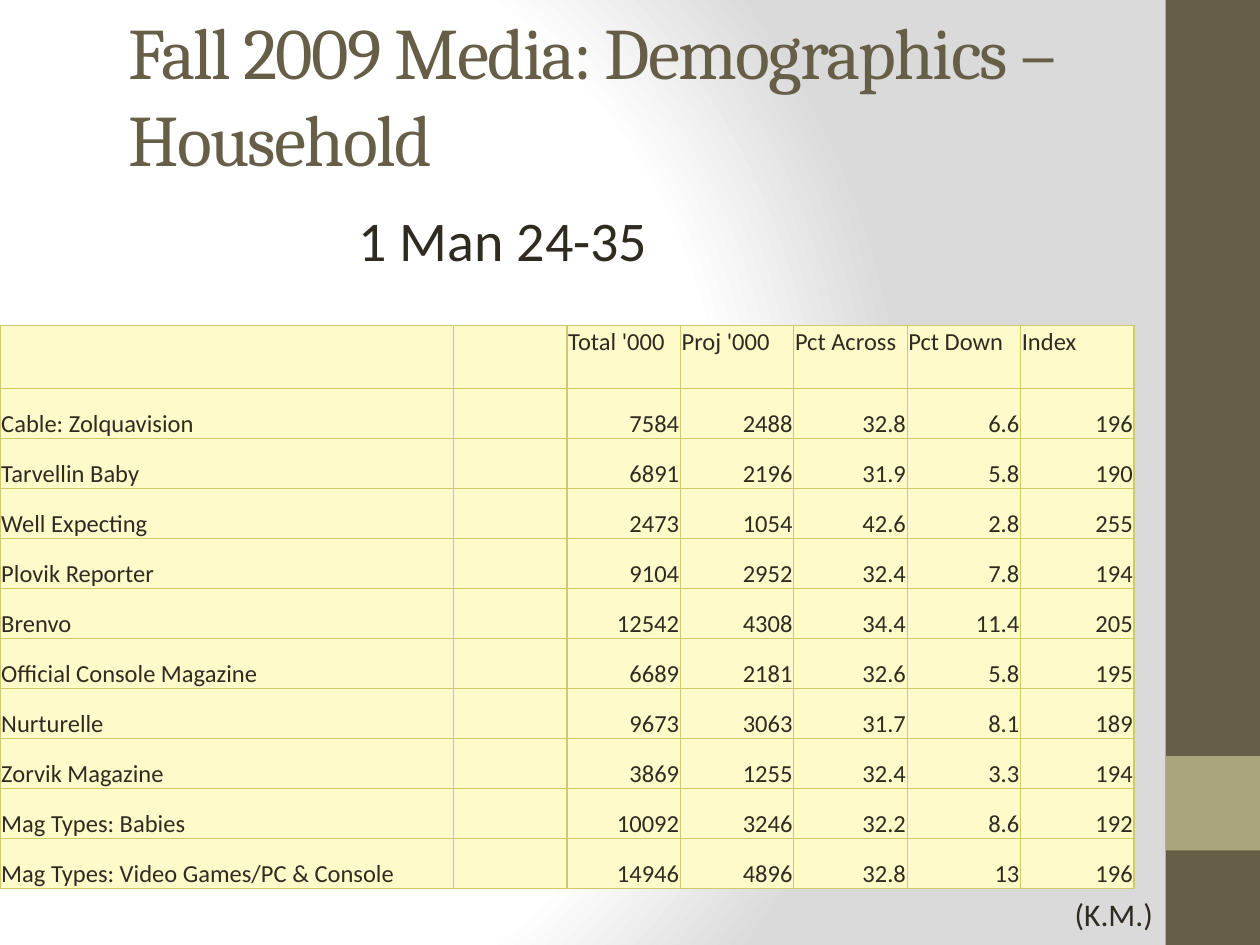
from pptx import Presentation
from pptx.dml.color import RGBColor
from pptx.enum.shapes import MSO_SHAPE as Preset
from pptx.enum.text import MSO_ANCHOR as Anchor, PP_ALIGN as Align
from pptx.oxml import parse_xml
from pptx.oxml.ns import nsdecls
from pptx.util import Pt

BROWN = RGBColor(0x67, 0x5E, 0x47)
SAGE = RGBColor(0xA9, 0xA5, 0x7C)
INK = RGBColor(0x2F, 0x2B, 0x20)
CREAM = RGBColor(0xFF, 0xFA, 0xC9)
BORDER = RGBColor(0xD0, 0xC9, 0x67)
WHITE = RGBColor(0xFF, 0xFF, 0xFF)
GREY = RGBColor(0xDA, 0xDA, 0xDA)

HEADINGS = ["", "", "Total '000", "Proj '000", "Pct Across", "Pct Down", "Index"]
MEDIA = [
    ("Cable: Zolquavision", "7584", "2488", "32.8", "6.6", "196"),
    ("Tarvellin Baby", "6891", "2196", "31.9", "5.8", "190"),
    ("Well Expecting", "2473", "1054", "42.6", "2.8", "255"),
    ("Plovik Reporter", "9104", "2952", "32.4", "7.8", "194"),
    ("Brenvo", "12542", "4308", "34.4", "11.4", "205"),
    ("Official Console Magazine", "6689", "2181", "32.6", "5.8", "195"),
    ("Nurturelle", "9673", "3063", "31.7", "8.1", "189"),
    ("Zorvik Magazine", "3869", "1255", "32.4", "3.3", "194"),
    ("Mag Types: Babies", "10092", "3246", "32.2", "8.6", "192"),
    ("Mag Types: Video Games/PC & Console", "14946", "4896", "32.8", "13", "196"),
]
COLUMN_WIDTHS = [259.2] + [64.8] * 6
ROW_HEIGHTS = [36] + [28.6] * len(MEDIA)
CELL_INSET = 0.72


class SlideBuilder:
    """Holds the style and the slide being filled; lengths are in points."""

    body_font = "Calibri"
    title_font = "Cambria"

    def __init__(self, slide):
        self.slide = slide

    def background(self):
        """Circular gradient, white at the left and grey at the right."""
        stops = "".join(
            f'<a:gs pos="{position * 1000}"><a:srgbClr val="{color}"/></a:gs>'
            for position, color in [(0, WHITE), (75, WHITE), (100, GREY)]
        )
        self.slide.element.cSld.insert(0, parse_xml(
            f'<p:bg {nsdecls("p", "a")}><p:bgPr><a:gradFill rotWithShape="1">'
            f'<a:gsLst>{stops}</a:gsLst><a:path path="circle">'
            '<a:fillToRect l="20000" t="50000" r="100000" b="50000"/></a:path>'
            '</a:gradFill><a:effectLst/></p:bgPr></p:bg>'
        ))

    def block(self, left, top, width, height, color):
        shape = self.slide.shapes.add_shape(
            Preset.RECTANGLE, Pt(left), Pt(top), Pt(width), Pt(height))
        shape.shadow.inherit = False
        shape.fill.solid()
        shape.fill.fore_color.rgb = color
        shape.line.fill.background()

    def format_run(self, run, size, color=INK, font=None):
        run.font.size = Pt(size)
        run.font.name = font or self.body_font
        run.font.color.rgb = color

    def text(self, text, left, top, width, height, size):
        shape = self.slide.shapes.add_textbox(Pt(left), Pt(top), Pt(width), Pt(height))
        text_frame = shape.text_frame
        text_frame.word_wrap = True
        text_frame.text = text
        self.format_run(text_frame.paragraphs[0].runs[0], size)
        return text_frame

    def title(self, text, left, top, width, height):
        text_frame = self.text(text, left, top, width, height, 41.4)
        text_frame.vertical_anchor = Anchor.MIDDLE
        run = text_frame.paragraphs[0].runs[0]
        self.format_run(run, 41.4, BROWN, self.title_font)
        run.font._element.set("spc", "-100")

    def cell(self, cell, text, anchor, align):
        cell.margin_left = cell.margin_right = cell.margin_top = Pt(CELL_INSET)
        cell.margin_bottom = 0
        cell.vertical_anchor = anchor
        properties = cell._tc.get_or_add_tcPr()
        for side in ("lnL", "lnR", "lnT", "lnB"):
            properties.append(parse_xml(
                f'<a:{side} {nsdecls("a")} w="{Pt(0.75)}"><a:solidFill>'
                f'<a:srgbClr val="{BORDER}"/></a:solidFill></a:{side}>'))
        cell.fill.solid()
        cell.fill.fore_color.rgb = CREAM
        if text:
            cell.text_frame.text = text
            paragraph = cell.text_frame.paragraphs[0]
            paragraph.alignment = align
            self.format_run(paragraph.runs[0], 14)

    def table(self, rows, left, top):
        table = self.slide.shapes.add_table(
            len(rows), len(COLUMN_WIDTHS), Pt(left), Pt(top),
            Pt(sum(COLUMN_WIDTHS)), Pt(sum(ROW_HEIGHTS))).table
        table.first_row = table.horz_banding = False
        for column, width in zip(table.columns, COLUMN_WIDTHS):
            column.width = Pt(width)
        for row_index, (row, values) in enumerate(zip(table.rows, rows)):
            row.height = Pt(ROW_HEIGHTS[row_index])
            anchor = Anchor.BOTTOM if row_index else Anchor.TOP
            for column_index, value in enumerate(values):
                is_number = row_index and column_index
                self.cell(row.cells[column_index], value, anchor,
                          Align.RIGHT if is_number else Align.LEFT)


def main():
    presentation = Presentation()
    presentation.slide_width, presentation.slide_height = Pt(720), Pt(540)
    builder = SlideBuilder(presentation.slides.add_slide(presentation.slide_layouts[6]))
    builder.background()
    builder.block(666, 0, 54, 540, BROWN)
    builder.block(666, 432, 54, 54, SAGE)
    builder.title("Fall 2009 Media: Demographics – Household", 66.24, 18, 630, 72)
    rows = [HEADINGS] + [[name, "", *figures] for name, *figures in MEDIA]
    builder.table(rows, 0, 186)
    builder.text("1 Man 24-35", 198, 114, 222, 46, 32)
    builder.text("(K.M.)", 607, 507.6, 63, 29, 18)
    presentation.save("out.pptx")


if __name__ == "__main__":
    main()
